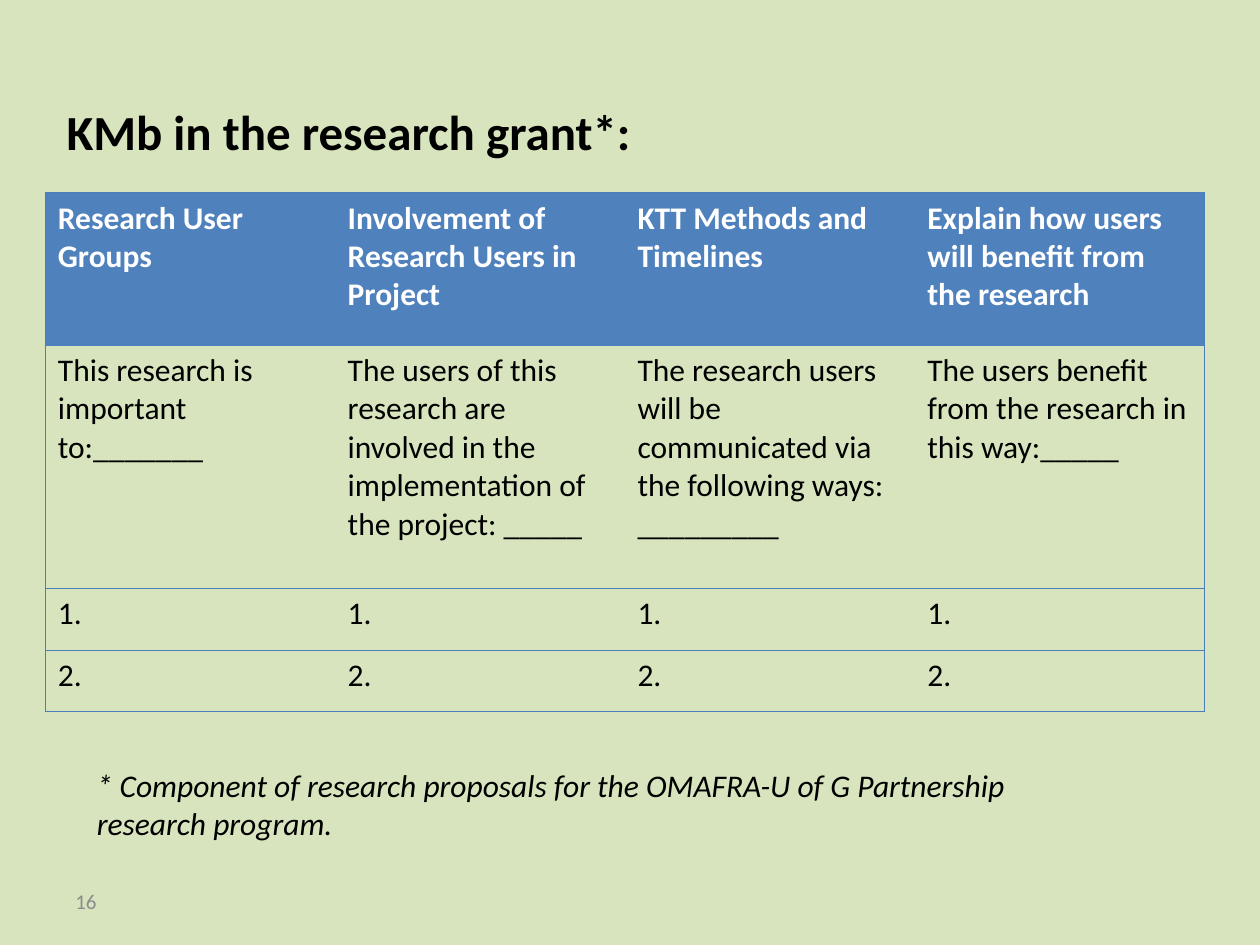
from dataclasses import dataclass

from lxml.etree import SubElement
from pptx import Presentation
from pptx.dml.color import RGBColor
from pptx.enum.text import MSO_ANCHOR
from pptx.oxml.ns import qn
from pptx.slide import Slide
from pptx.table import _Cell
from pptx.util import Inches, Pt

WIDTH, HEIGHT = 10, 7.5
FONT = "Calibri"
COLORS = {
    "background": "D7E4BD",
    "header": "4F81BD",
    "border": "4B7EBC",
    "text": "000000",
    "header_text": "FFFFFF",
    "number": "8C8C8C",
}
PLAIN_TABLE_STYLE = "{2D5ABB26-0587-4C30-8999-92F81FD0307C}"
TABLE_LEFT, TABLE_TOP, COLUMN_WIDTH = 0.36, 1.53, 2.3
ROW_HEIGHTS = (1.21, 1.93, 0.49, 0.49)
ROWS = (
    (
        "Research User Groups",
        "Involvement of Research Users in Project",
        "KTT Methods and Timelines",
        "Explain how users will benefit from the research",
    ),
    (
        "This research is important to:_______",
        "The users of this research are involved in the implementation of the project: _____",
        "The research users will be communicated via the following ways: _________",
        "The users benefit from the research in this way:_____",
    ),
    ("1.",) * 4,
    ("2.",) * 4,
)


@dataclass(frozen=True)
class Label:
    """A text box; lengths are shares of the slide's size."""
    text: str
    left: float
    top: float
    width: float
    height: float
    size: int
    color: str = "text"
    bold: bool = False
    italic: bool = False
    anchor: MSO_ANCHOR = MSO_ANCHOR.TOP


LABELS = (
    Label("KMb in the research grant*:", 0.043, 0.101, 0.709, 0.076, 28, bold=True),
    Label("* Component of research proposals for the OMAFRA-U of G Partnership research program.",
          0.067, 0.804, 0.811, 0.095, 18, italic=True),
    Label("16", 0.05, 0.927, 0.233, 0.053, 12, "number", anchor=MSO_ANCHOR.MIDDLE),
)


def color_of(name: str) -> RGBColor:
    return RGBColor.from_string(COLORS[name])


def set_font(para, size: int, color: str, bold: bool = False, italic: bool = False) -> None:
    font = para.font
    font.name, font.size = FONT, Pt(size)
    font.bold, font.italic = bold, italic
    font.color.rgb = color_of(color)


def add_label(page: Slide, label: Label) -> None:
    box = page.shapes.add_textbox(
        Inches(label.left * WIDTH), Inches(label.top * HEIGHT),
        Inches(label.width * WIDTH), Inches(label.height * HEIGHT))
    frame = box.text_frame
    frame.word_wrap = True
    frame.vertical_anchor = label.anchor
    frame.text = label.text
    set_font(frame.paragraphs[0], label.size, label.color, label.bold, label.italic)


def set_borders(cell: _Cell, sides: str) -> None:
    """Draw the named sides (L, R, T, B) of a cell."""
    properties = cell._tc.get_or_add_tcPr()
    for side in sides:
        line = SubElement(properties, qn(f"a:ln{side}"), w=str(Pt(0.75)))
        fill = SubElement(line, qn("a:solidFill"))
        SubElement(fill, qn("a:srgbClr"), val=COLORS["border"])


def add_grant_table(page: Slide) -> None:
    column_count = len(ROWS[0])
    table = page.shapes.add_table(
        len(ROWS), column_count, Inches(TABLE_LEFT), Inches(TABLE_TOP),
        Inches(COLUMN_WIDTH * column_count), Inches(sum(ROW_HEIGHTS))).table
    table.horz_banding = False
    table._tbl.tblPr.find(qn("a:tableStyleId")).text = PLAIN_TABLE_STYLE
    for column in table.columns:
        column.width = Inches(COLUMN_WIDTH)
    for row_index, (height, texts) in enumerate(zip(ROW_HEIGHTS, ROWS)):
        table.rows[row_index].height = Inches(height)
        is_header = row_index == 0
        for column_index, text in enumerate(texts):
            cell = table.cell(row_index, column_index)
            cell.text = text
            set_font(cell.text_frame.paragraphs[0], 18,
                     "header_text" if is_header else "text", bold=is_header)
            left = "L" if column_index == 0 else ""
            right = "R" if column_index == column_count - 1 else ""
            set_borders(cell, left + right + "TB")
            if is_header:
                cell.fill.solid()
                cell.fill.fore_color.rgb = color_of("header")
            else:
                cell.fill.background()


def main() -> None:
    deck = Presentation()
    deck.slide_width, deck.slide_height = Inches(WIDTH), Inches(HEIGHT)
    page = deck.slides.add_slide(deck.slide_layouts[6])
    page.background.fill.solid()
    page.background.fill.fore_color.rgb = color_of("background")
    add_grant_table(page)
    for label in LABELS:
        add_label(page, label)
    deck.save("out.pptx")


if __name__ == "__main__":
    main()
